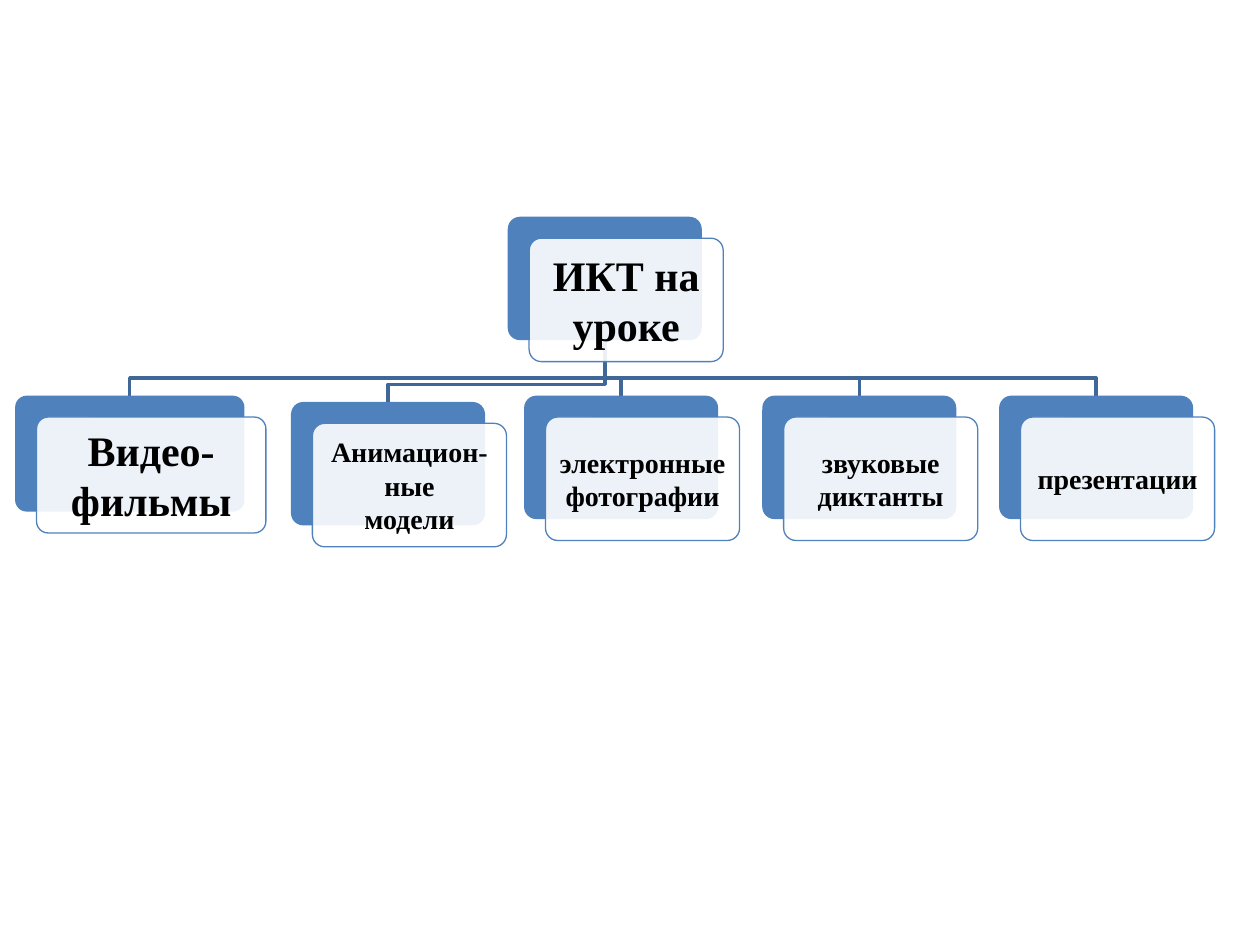
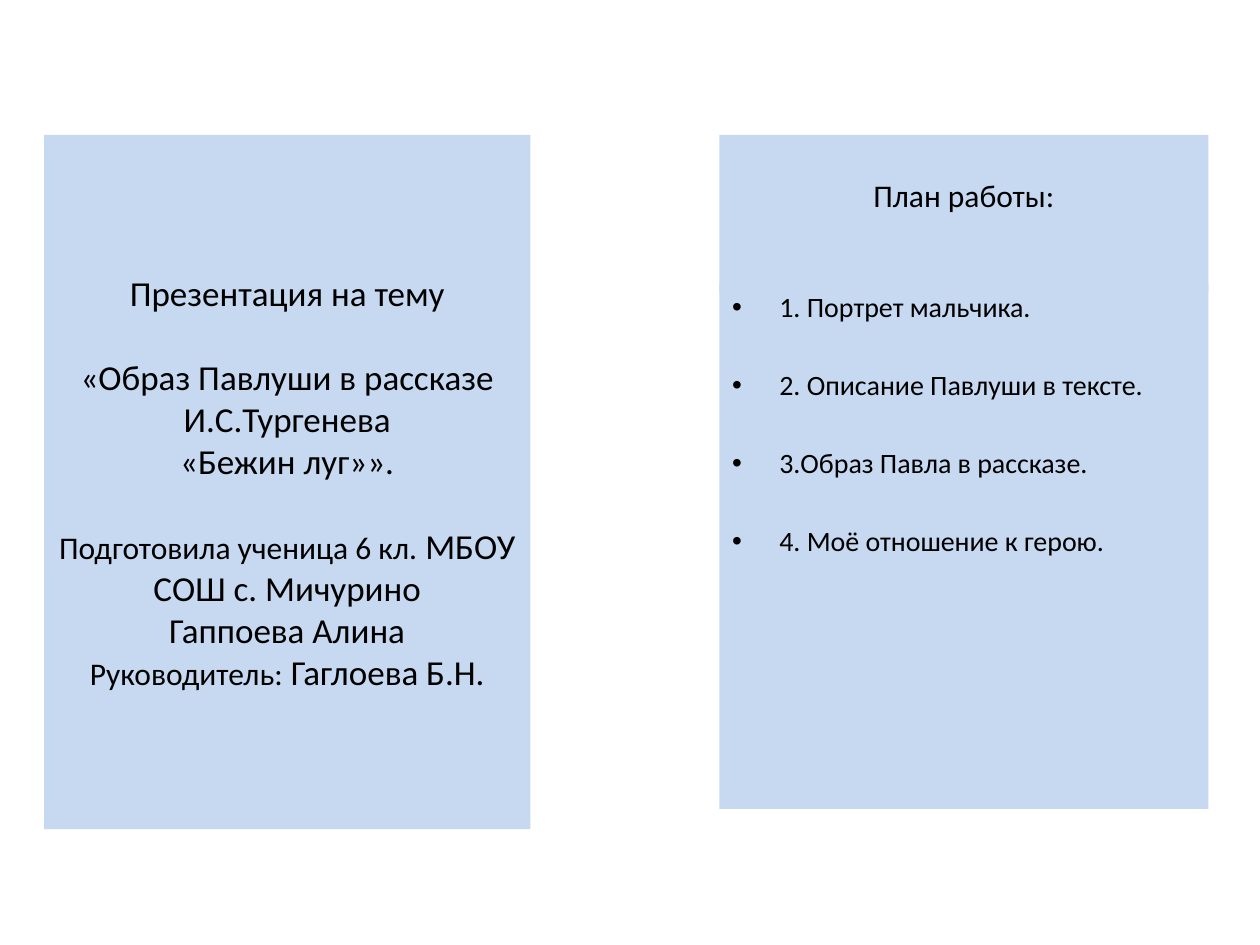
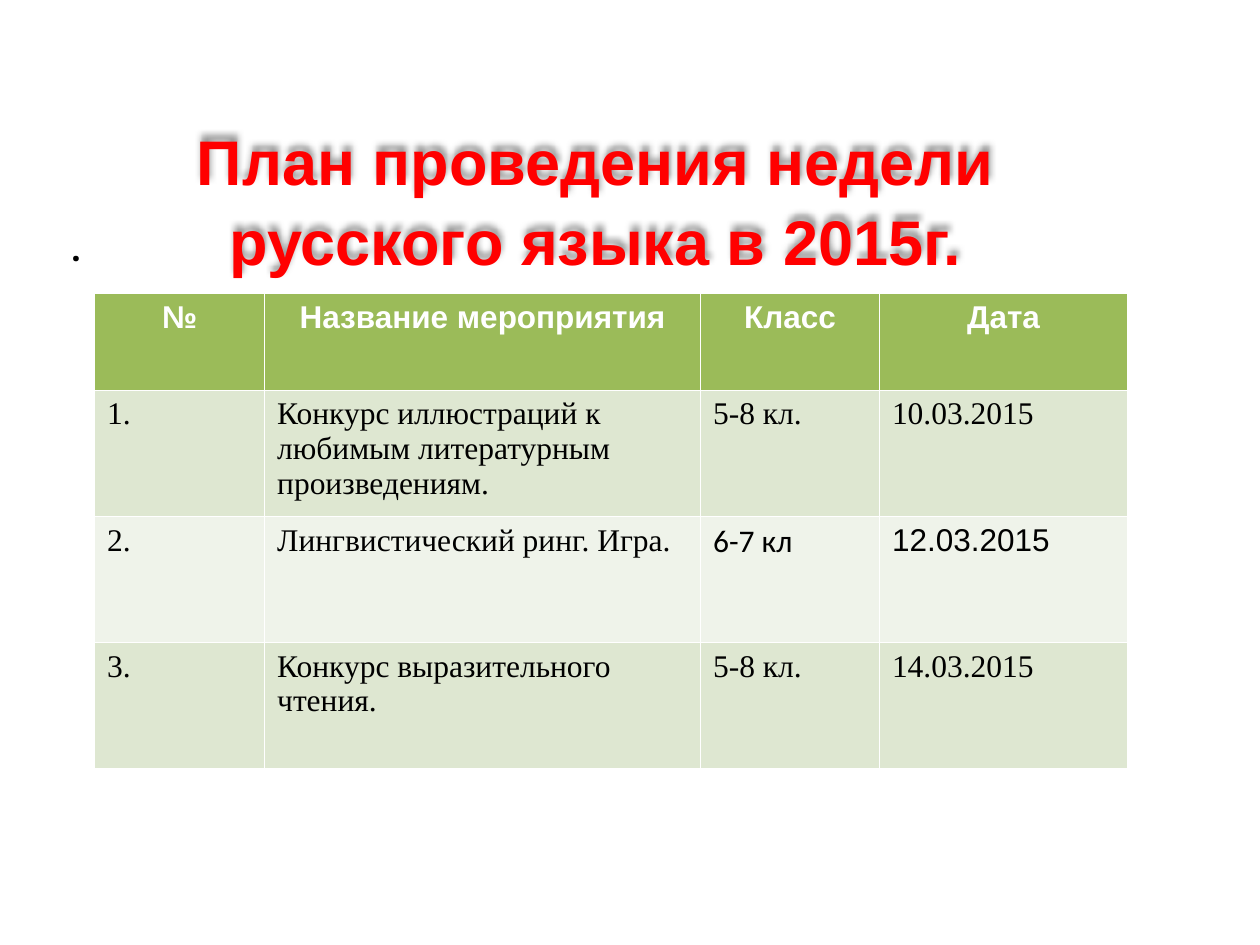
from lxml import etree
from pptx import Presentation
from pptx.dml.color import RGBColor
from pptx.enum.shapes import MSO_SHAPE
from pptx.enum.text import MSO_ANCHOR, MSO_AUTO_SIZE, PP_ALIGN
from pptx.oxml import parse_xml
from pptx.oxml.ns import nsdecls, qn
from pptx.util import Inches, Pt

BLUE, DARK_BLUE, PALE_BLUE = "4F81BD", "3F6797", "C6D9F1"
GREEN, GREEN_BANDS = "9BBB59", ("DEE7D1", "EFF3EA")
BLACK, WHITE, RED = "000000", "FFFFFF", "FF0000"
SERIF, SANS, BODY = "Times New Roman", "Arial", "Calibri"

rgb = RGBColor.from_string


def add_run(paragraph, text, size, font, color=BLACK, bold=False):
    run = paragraph.add_run()
    run.text = text
    run.font.size = Pt(size)
    run.font.name = font
    run.font.bold = bold
    run.font.color.rgb = rgb(color)


def paint(shape, fill=None, line=None, width=0.75):
    """Set a flat fill and outline; None means no fill or no outline."""
    shape.shadow.inherit = False
    if fill:
        shape.fill.solid()
        shape.fill.fore_color.rgb = rgb(fill)
    else:
        shape.fill.background()
    if line:
        shape.line.color.rgb = rgb(line)
        shape.line.width = Pt(width)
    else:
        shape.line.fill.background()


presentation = Presentation()
presentation.slide_width, presentation.slide_height = Inches(10), Inches(7.5)
content_layout, title_layout, blank_layout = (
    presentation.slide_layouts[index] for index in (1, 5, 6))

# Slide 1: tree of ICT resources
slide = presentation.slides.add_slide(blank_layout)
ROOT_X, ROOT_BOTTOM, CARD_OFFSET = 4.8, 2.7, 0.17
# left, top, width, height, text size, paragraphs
root = (4.03, 1.72, 1.54, 0.98, 24, ["ИКТ на уроке"])
branches = [
    (0.12, 3.14, 1.82, 0.92, 24, ["Видео-фильмы"]),
    (2.31, 3.19, 1.54, 0.98, 16, ["Анимацион-ные", "модели"]),
    (4.16, 3.14, 1.54, 0.98, 16, ["электронные", "фотографии"]),
    (6.05, 3.14, 1.54, 0.98, 16, ["звуковые диктанты"]),
    (7.93, 3.14, 1.54, 0.98, 16, ["презентации"]),
]

for left, top, width, *_ in reversed(branches):
    center, bend = left + width / 2, top - 0.14
    builder = slide.shapes.build_freeform(Inches(ROOT_X), Inches(ROOT_BOTTOM))
    points = [(ROOT_X, bend), (center, bend), (center, top)]
    builder.add_line_segments([(Inches(x), Inches(y)) for x, y in points], close=False)
    paint(builder.convert_to_shape(), line=DARK_BLUE, width=2)

for left, top, width, height, size, lines in [root, *branches]:
    for offset in (0, CARD_OFFSET):
        card = slide.shapes.add_shape(
            MSO_SHAPE.ROUNDED_RECTANGLE, Inches(left + offset), Inches(top + offset),
            Inches(width), Inches(height))
        card.adjustments[0] = 0.1
        if offset:
            paint(card, WHITE, BLUE)
        else:
            paint(card, BLUE)
    color_element = card.fill._xPr.find(qn("a:solidFill"))[0]
    etree.SubElement(color_element, qn("a:alpha")).set("val", "90000")
    frame = card.text_frame
    frame.word_wrap = True
    frame.vertical_anchor = MSO_ANCHOR.MIDDLE
    inset = Inches(0.07 if size == 24 else 0.04)
    frame.margin_left = frame.margin_right = inset
    frame.margin_top = frame.margin_bottom = inset
    for index, line in enumerate(lines):
        paragraph = frame.add_paragraph() if index else frame.paragraphs[0]
        paragraph.alignment = PP_ALIGN.CENTER
        add_run(paragraph, line, size, SERIF, bold=True)

# Slide 2: topic and work plan
slide = presentation.slides.add_slide(content_layout)
topic = slide.shapes.add_shape(
    MSO_SHAPE.RECTANGLE, Inches(0.35), Inches(1.07), Inches(3.86), Inches(5.51))
paint(topic, PALE_BLUE)
frame = topic.text_frame
frame.word_wrap = True
frame.vertical_anchor = MSO_ANCHOR.MIDDLE
# space before, runs as (text, size)
topic_lines = [
    (0, [("Презентация на тему", 20)]),
    (24, [("«Образ Павлуши в рассказе", 20)]),
    (0, [("И.С.Тургенева", 20)]),
    (0, [("«Бежин луг»».", 20)]),
    (24, [("Подготовила ученица 6 кл.", 18), (" МБОУ СОШ с. Мичурино", 20)]),
    (0, [("Гаппоева Алина", 20)]),
    (0, [("Руководитель:", 18), (" Гаглоева Б.Н.", 20)]),
]
for index, (space, runs) in enumerate(topic_lines):
    paragraph = frame.add_paragraph() if index else frame.paragraphs[0]
    paragraph.alignment = PP_ALIGN.CENTER
    paragraph.space_before = Pt(space)
    for text, size in runs:
        add_run(paragraph, text, size, BODY)

title, plan = slide.placeholders
for placeholder, top, height in ((title, 1.07, 1.25), (plan, 2.25, 4.17)):
    placeholder.left, placeholder.top = Inches(5.71), Inches(top)
    placeholder.width, placeholder.height = Inches(3.88), Inches(height)
    placeholder.fill.solid()
    placeholder.fill.fore_color.rgb = rgb(PALE_BLUE)
    placeholder.text_frame.auto_size = MSO_AUTO_SIZE.NONE
title.text_frame.margin_bottom = Inches(0.35)
add_run(title.text_frame.paragraphs[0], "План работы:", 18, BODY)

plan_items = ["1. Портрет мальчика.", "2. Описание Павлуши в тексте.",
              "3.Образ Павла в рассказе.", "4. Моё отношение к герою."]
for index, item in enumerate(plan_items):
    frame = plan.text_frame
    paragraph = frame.add_paragraph() if index else frame.paragraphs[0]
    paragraph.space_before = Pt(25.4 if index else 0)
    add_run(paragraph, item, 16, BODY)

# Slide 3: schedule of the language week
slide = presentation.slides.add_slide(title_layout)
title = slide.shapes.title
title.left, title.top = Inches(0.51), Inches(0.92)
title.width, title.height = Inches(8.43), Inches(1.31)
title.text_frame.auto_size = MSO_AUTO_SIZE.NONE
paragraph = title.text_frame.paragraphs[0]
paragraph.line_spacing = 1.05
add_run(paragraph, "План проведения недели русского языка в 2015г.", 36, SANS, RED, True)
title._element.spPr.append(parse_xml(
    f'<a:effectLst {nsdecls("a")}><a:outerShdw blurRad="50800" dist="50800" dir="16200000">'
    '<a:srgbClr val="000000"><a:alpha val="40000"/></a:srgbClr></a:outerShdw></a:effectLst>'))

dot = slide.shapes.add_textbox(Inches(0.43), Inches(1.78), Inches(3.78), Inches(0.4))
dot.text_frame.word_wrap = True
add_run(dot.text_frame.paragraphs[0], ".", 18, "Noto Sans Mono", bold=True)

rows = [
    ["№", "Название мероприятия", "Класс", "Дата"],
    ["1.", "Конкурс иллюстраций к любимым литературным произведениям.",
     "5-8 кл.", "10.03.2015"],
    ["2.", "Лингвистический ринг. Игра.", "6-7 кл", "12.03.2015"],
    ["3.", "Конкурс выразительного чтения.", "5-8 кл.", "14.03.2015"],
]
special_fonts = {(2, 2): BODY, (2, 3): SANS}
table = slide.shapes.add_table(
    len(rows), len(rows[0]), Inches(0.75), Inches(2.33), Inches(8.19), Inches(3.78)).table
for column, width in zip(table.columns, (1.35, 3.46, 1.42, 1.97)):
    column.width = Inches(width)
for row, height in zip(table.rows, (0.77, 1, 1, 1)):
    row.height = Inches(height)
for row_index, row in enumerate(rows):
    for column_index, text in enumerate(row):
        cell = table.cell(row_index, column_index)
        cell.fill.solid()
        paragraph = cell.text_frame.paragraphs[0]
        if row_index == 0:
            cell.fill.fore_color.rgb = rgb(GREEN)
            paragraph.alignment = PP_ALIGN.CENTER
            add_run(paragraph, text, 18, SANS, WHITE, True)
        else:
            cell.fill.fore_color.rgb = rgb(GREEN_BANDS[(row_index - 1) % 2])
            font = special_fonts.get((row_index, column_index), SERIF)
            add_run(paragraph, text, 18, font)

presentation.save("out.pptx")
